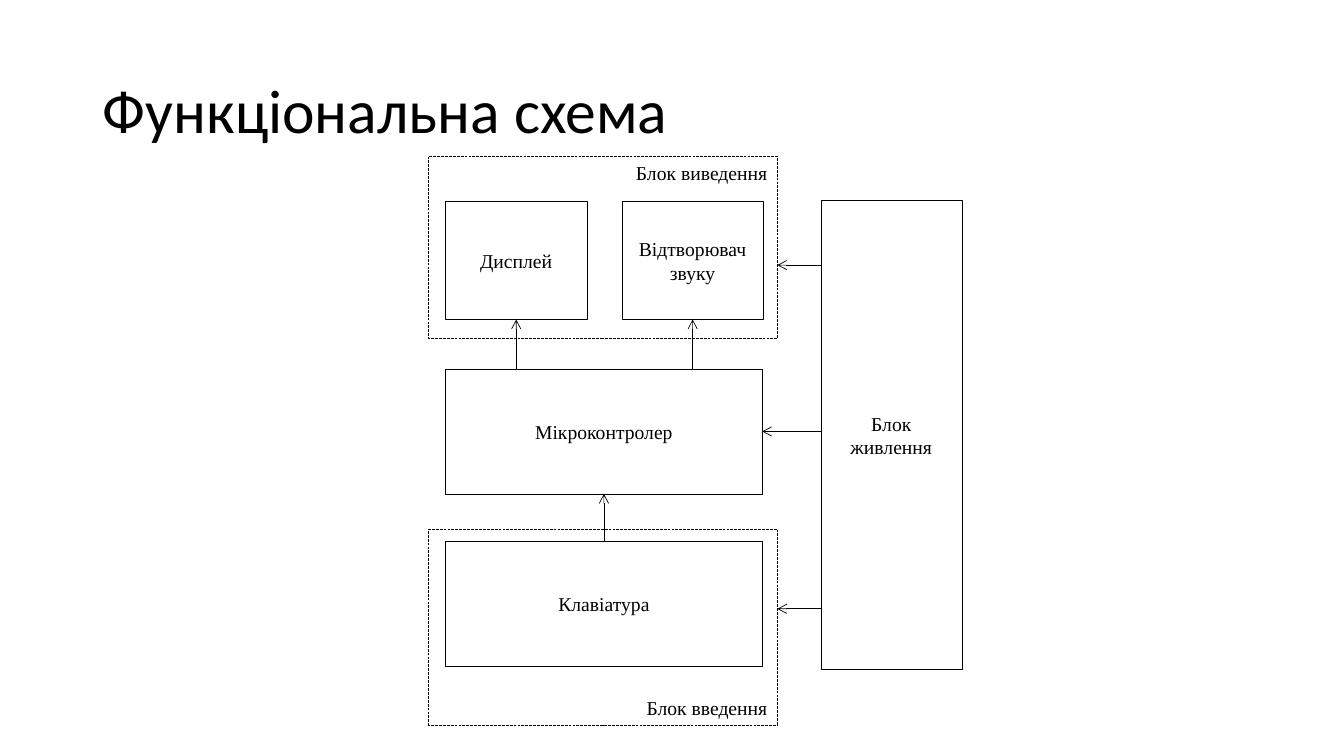
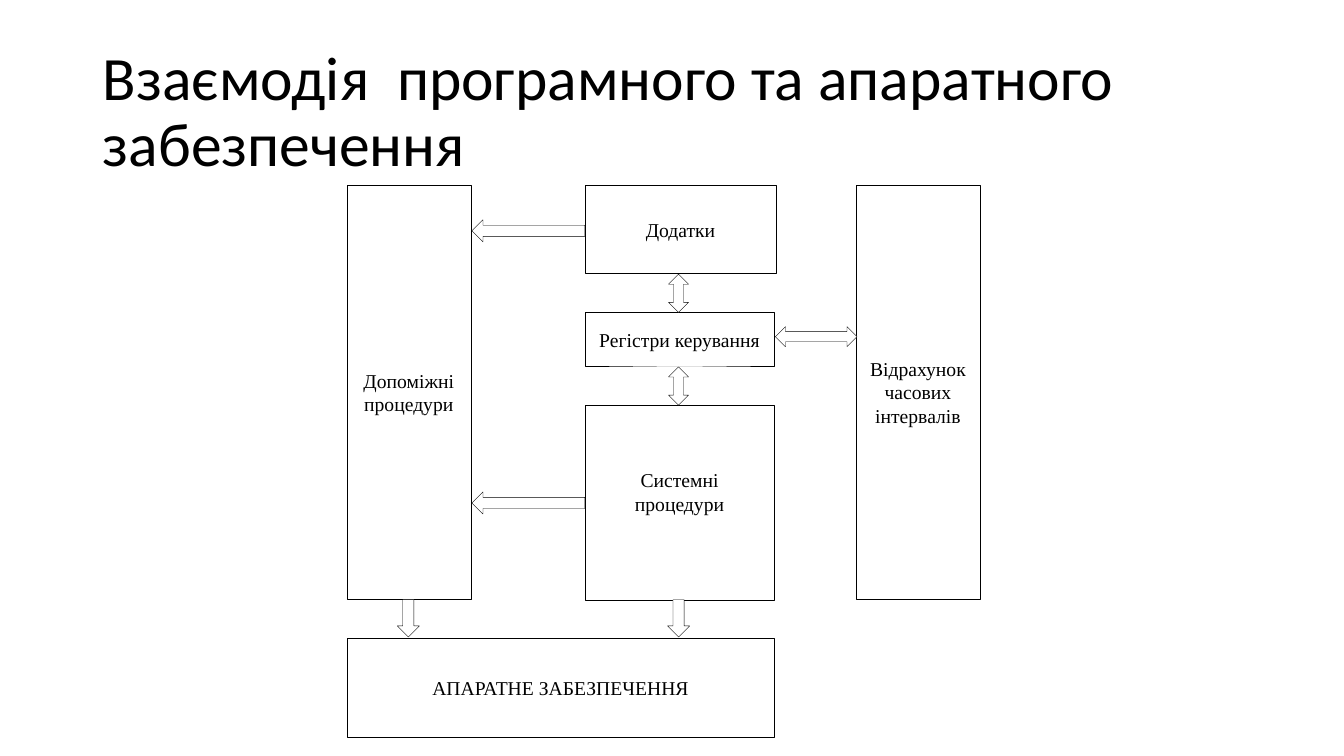
from dataclasses import dataclass

from lxml import etree
from pptx import Presentation
from pptx.dml.color import RGBColor
from pptx.enum.dml import MSO_LINE
from pptx.enum.shapes import MSO_CONNECTOR, MSO_SHAPE
from pptx.enum.text import MSO_ANCHOR, MSO_AUTO_SIZE, PP_ALIGN
from pptx.oxml.ns import qn
from pptx.util import Pt

SCALE = 9144
TITLE_ONLY = 5
TOP, LEFT, BOTTOM, RIGHT = range(4)
RECT = MSO_SHAPE.RECTANGLE
UP_DOWN = MSO_SHAPE.UP_DOWN_ARROW
SIDEWAYS = MSO_SHAPE.LEFT_RIGHT_ARROW
LEFTWARD = MSO_SHAPE.LEFT_ARROW
DOWNWARD = MSO_SHAPE.DOWN_ARROW
STRAIGHT = MSO_CONNECTOR.STRAIGHT
LONG_DASH = MSO_LINE.LONG_DASH
HIGH, MIDDLE, LOW = MSO_ANCHOR.TOP, MSO_ANCHOR.MIDDLE, MSO_ANCHOR.BOTTOM
AT_LEFT, AT_RIGHT, CENTRE = PP_ALIGN.LEFT, PP_ALIGN.RIGHT, PP_ALIGN.CENTER


@dataclass(frozen=True)
class Theme:
    ink: RGBColor = RGBColor(0, 0, 0)
    paper: RGBColor = RGBColor(255, 255, 255)
    head_font: str = "Calibri"
    head_size: int = 44
    font: str = "Times New Roman"
    size: int = 14
    border: float = 0.25
    wire: float = 0.5


class Deck:
    """Draws block diagrams in one shared style."""

    def __init__(self, theme):
        self.theme = theme
        self.prs = Presentation()
        self.prs.slide_width, self.prs.slide_height = self.emu(1333, 750)
        self.slide = None

    def emu(self, *px):
        return [n * SCALE for n in px]

    def style(self, frame, font, size, align):
        for par in frame.paragraphs:
            par.alignment = align
            for run in par.runs:
                run.font.name = font
                run.font.size = Pt(size)
                run.font.color.rgb = self.theme.ink

    def page(self, text):
        layout = self.prs.slide_layouts[TITLE_ONLY]
        self.slide = self.prs.slides.add_slide(layout)
        title = self.slide.shapes.title
        title.left, title.top, title.width, title.height = self.emu(92, 40, 1150, 145)
        frame = title.text_frame
        frame.text = text
        frame.word_wrap = True
        frame.auto_size = MSO_AUTO_SIZE.NONE
        frame.vertical_anchor = MIDDLE
        frame.paragraphs[0].line_spacing = 0.9
        self.style(frame, self.theme.head_font, self.theme.head_size, AT_LEFT)

    def shape(self, kind, x, y, w, h):
        shape = self.slide.shapes.add_shape(kind, *self.emu(x, y, w, h))
        shape.shadow.inherit = False
        shape.fill.solid()
        shape.fill.fore_color.rgb = self.theme.paper
        shape.line.color.rgb = self.theme.ink
        shape.line.width = Pt(self.theme.border)
        return shape

    def box(self, text, x, y, w, h, anchor=MIDDLE, align=CENTRE):
        box = self.shape(RECT, x, y, w, h)
        frame = box.text_frame
        frame.text = text
        frame.word_wrap = True
        frame.vertical_anchor = anchor
        self.style(frame, self.theme.font, self.theme.size, align)
        return box

    def group(self, text, x, y, w, h, anchor):
        frame = self.box(text, x, y, w, h, anchor, AT_RIGHT)
        frame.fill.background()
        frame.line.dash_style = LONG_DASH

    def arrow(self, start, end, source=None, target=None):
        line = self.slide.shapes.add_connector(STRAIGHT, *self.emu(*start, *end))
        if source:
            line.begin_connect(*source)
        if target:
            line.end_connect(*target)
        line.line.color.rgb = self.theme.ink
        line.line.width = Pt(self.theme.wire)
        tail = etree.SubElement(line.line._get_or_add_ln(), qn("a:tailEnd"))
        tail.set("type", "arrow")
        props = line._element.find(qn("p:spPr"))
        etree.SubElement(props, qn("a:effectLst"))


def scheme(deck):
    deck.page("Функціональна схема")
    deck.group("Блок введення", 425, 525, 346, 194, LOW)
    deck.group("Блок виведення", 425, 155, 346, 181, HIGH)
    chip = deck.box("Мікроконтролер", 442, 366, 314, 124)
    screen = deck.box("Дисплей", 442, 200, 140, 117)
    sound = deck.box("Відтворювач звуку", 617, 200, 140, 117)
    keys = deck.box("Клавіатура", 442, 537, 314, 124)
    deck.box("Блок живлення", 814, 199, 140, 465)
    for x, part in ((512, screen), (687, sound)):
        deck.arrow((x, 366), (x, 317), target=(part, BOTTOM))
    deck.arrow((599, 537), (599, 490), (keys, TOP), (chip, BOTTOM))
    for y in (263, 604):
        deck.arrow((814, y), (771, y))
    deck.arrow((814, 428), (756, 428), target=(chip, RIGHT))


def layers(deck):
    deck.page("Взаємодія  програмного та апаратного  забезпечення")
    deck.box("Додатки", 580, 184, 190, 87)
    deck.box("Регістри керування", 580, 310, 188, 53)
    system = deck.box("Системні процедури", 580, 402, 188, 193)
    system.text_frame.margin_bottom = deck.emu(26)[0]
    deck.box("АПАРАТНЕ ЗАБЕЗПЕЧЕННЯ", 344, 633, 424, 98)
    for text, x in (("Відрахунок часових інтервалів", 849), ("Допоміжні процедури", 344)):
        deck.box(text, x, 184, 123, 410)
    for y in (272, 364):
        deck.shape(UP_DOWN, 663, y, 20, 38)
    deck.shape(SIDEWAYS, 769, 324, 81, 20)
    for y in (218, 488):
        deck.shape(LEFTWARD, 468, y, 112, 22)
    for x in (394, 662):
        deck.shape(DOWNWARD, x, 595, 22, 37)


def main():
    deck = Deck(Theme())
    scheme(deck)
    layers(deck)
    deck.prs.save("out.pptx")


if __name__ == "__main__":
    main()
